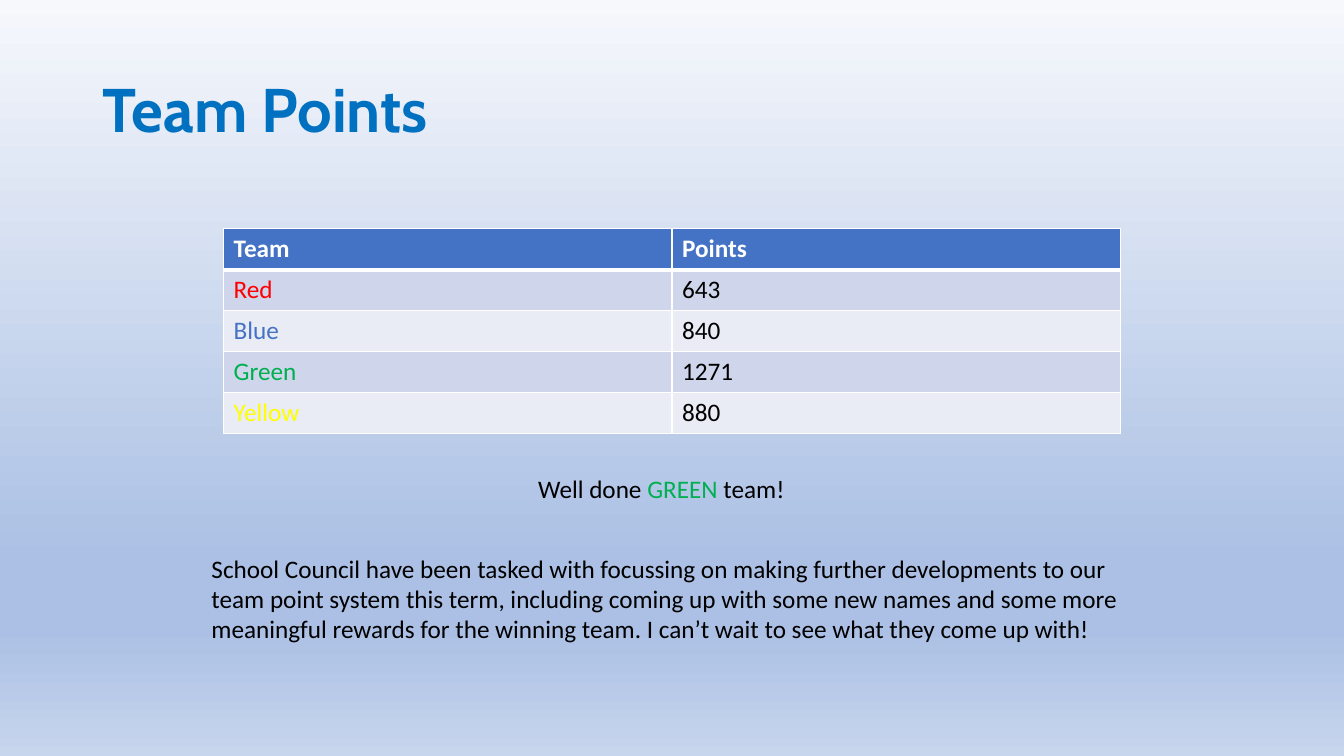
import pptx
import pptx.util
import pptx.dml.color
import pptx.enum.text
import pptx.oxml.ns
from lxml import etree

PX = 9525  # EMU per px, 96 px to the inch
qn = pptx.oxml.ns.qn

BLACK, WHITE, BLUE, GREEN = "000000", "FFFFFF", "4472C4", "00B050"
BANDS = ("CFD5EA", "E9EBF5")
SKY_STOPS = ((0, "F6F8FC"), (74, "ABC0E4"), (83, "ABC0E4"), (100, "C7D5ED"))
TEAMS = (
    ("Red", "643", "FF0000"),
    ("Blue", "840", BLUE),
    ("Green", "1271", GREEN),
    ("Yellow", "880", "FFFF00"),
)
COUNCIL_NEWS = (
    "School Council have been tasked with focussing on making further "
    "developments to our team point system this term, including coming up "
    "with some new names and some more meaningful rewards for the winning "
    "team. I can’t wait to see what they come up with!"
)


def px(n):
    return pptx.util.Emu(n * PX)


def rgb(color):
    return pptx.dml.color.RGBColor.from_string(color)


def add_run(p, text, color, size=18, font="Calibri", bold=False):
    r = p.add_run()
    r.text = text
    r.font.size = pptx.util.Pt(size)
    r.font.name = font
    r.font.bold = bold
    r.font.color.rgb = rgb(color)


def add_text_box(slide, box):
    tf = slide.shapes.add_textbox(*map(px, box)).text_frame
    tf.word_wrap = True
    return tf


def add_background(slide):
    fill = slide.background.fill
    fill.gradient()
    fill.gradient_angle = 270
    stops = slide.element.find(".//" + qn("a:gsLst"))
    for stop in list(stops):
        stops.remove(stop)
    for percent, color in SKY_STOPS:
        stop = etree.SubElement(stops, qn("a:gs"), pos=str(percent * 1000))
        etree.SubElement(stop, qn("a:srgbClr"), val=color)


def add_title(slide, box):
    tf = add_text_box(slide, box)
    tf.vertical_anchor = pptx.enum.text.MSO_ANCHOR.MIDDLE
    p = tf.paragraphs[0]
    p.line_spacing = 0.9
    add_run(p, "Team Points", "0070C0", 44, "Cabin", True)


def style_cell(cell, text, color, fill, bold, top, bottom):
    add_run(cell.text_frame.paragraphs[0], text, color, bold=bold)
    # Borders come before the fill in the cell properties
    props = cell._tc.get_or_add_tcPr()
    for side, width in (("L", 1), ("R", 1), ("T", top), ("B", bottom)):
        ln = etree.SubElement(props, qn("a:ln" + side), w=str(pptx.util.Pt(width)))
        solid = etree.SubElement(ln, qn("a:solidFill"))
        etree.SubElement(solid, qn("a:srgbClr"), val=WHITE)
    cell.fill.solid()
    cell.fill.fore_color.rgb = rgb(fill)


def add_points_table(slide, box):
    table = slide.shapes.add_table(len(TEAMS) + 1, 2, *map(px, box)).table
    # Header row with a heavy rule below
    for col, heading in enumerate(("Team", "Points")):
        style_cell(table.cell(0, col), heading, WHITE, BLUE, True, 1, 3)
    # Banded team rows
    for row, (team, points, color) in enumerate(TEAMS, 1):
        fill = BANDS[(row - 1) % 2]
        top = 3 if row == 1 else 1
        style_cell(table.cell(row, 0), team, color, fill, False, top, 1)
        style_cell(table.cell(row, 1), points, BLACK, fill, False, top, 1)


def add_praise(slide, box):
    p = add_text_box(slide, box).paragraphs[0]
    for text, color in (("Well done ", BLACK), ("GREEN", GREEN), (" team!", BLACK)):
        add_run(p, text, color)


def add_news(slide, box):
    add_run(add_text_box(slide, box).paragraphs[0], COUNCIL_NEWS, BLACK)


def main():
    prs = pptx.Presentation()
    prs.slide_width, prs.slide_height = px(1280), px(720)
    slide = prs.slides.add_slide(prs.slide_layouts[6])
    add_background(slide)
    add_title(slide, (88, 38, 1104, 139))
    add_points_table(slide, (213, 218, 854, 195))
    add_praise(slide, (503, 446, 274, 38))
    add_news(slide, (192, 522, 926, 97))
    prs.save("out.pptx")


if __name__ == "__main__":
    main()
